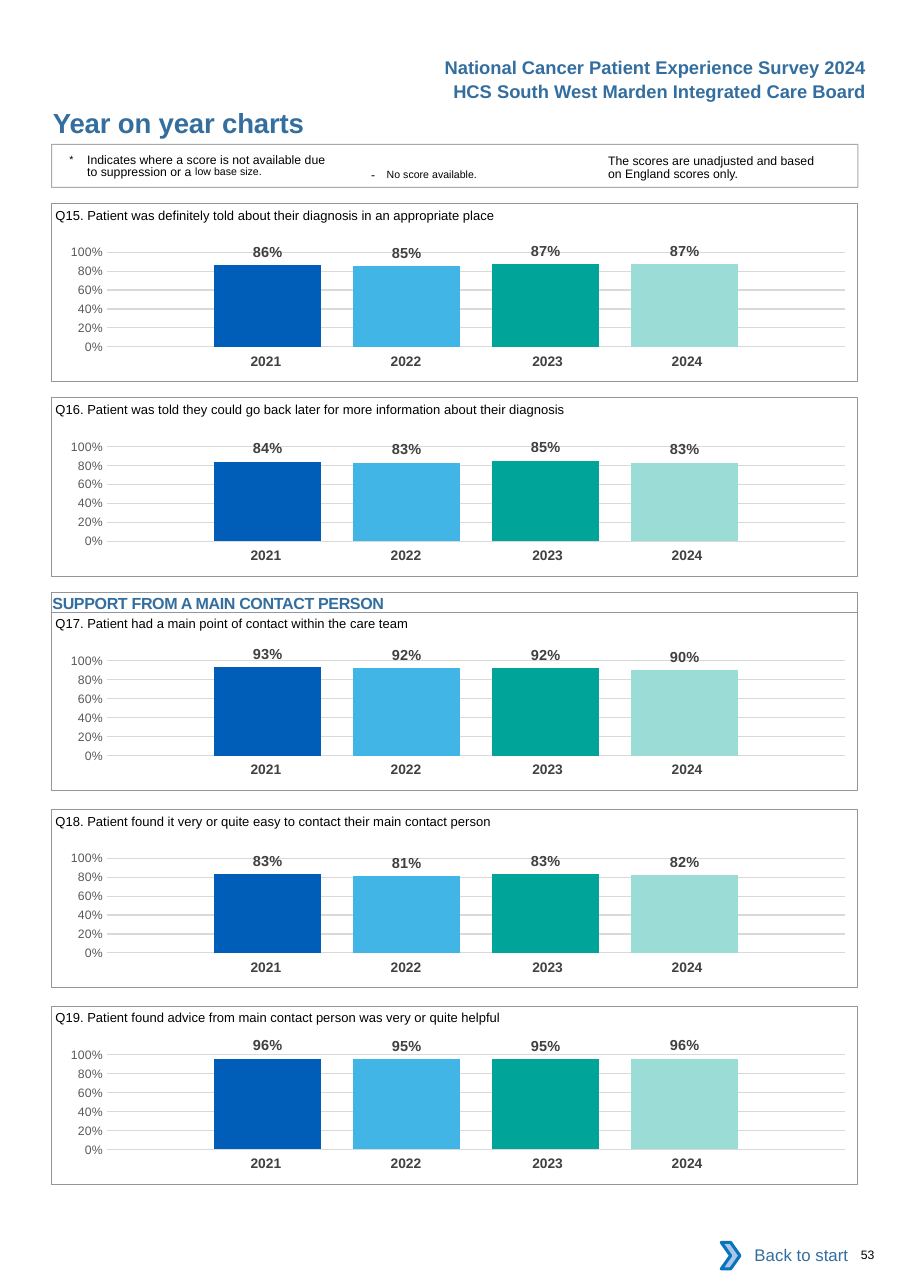
from lxml.etree import SubElement
from pptx import Presentation
from pptx.chart.data import CategoryChartData
from pptx.dml.color import RGBColor
from pptx.enum.chart import XL_CHART_TYPE, XL_LABEL_POSITION, XL_TICK_MARK
from pptx.enum.shapes import MSO_SHAPE
from pptx.enum.text import MSO_ANCHOR, PP_ALIGN
from pptx.oxml import parse_xml
from pptx.oxml.ns import nsdecls, qn
from pptx.util import Cm, Pt

HEADING_BLUE = "336E9F"
FRAME_GREY = "939598"
PANEL_LEFT, PANEL_WIDTH, PANEL_HEIGHT = 1.19, 18.59, 4.11
YEARS = {"2021": "005EB8", "2022": "41B6E6", "2023": "00A499", "2024": "9CDCD7"}
YEAR_WIDTHS = (3.23, 3.23, 3.4, 3.23)
YEAR_RIGHT_MARGINS = (0, 0, 0.1, 0.3)
NO_TABLE_STYLE = "{2D5ABB26-0587-4C30-8999-92F81FD0307C}"

QUESTIONS = [
    (4.69, "Q15. Patient was definitely told about their diagnosis in an appropriate place",
     (0.86, 0.85, 0.87, 0.87)),
    (9.17, "Q16. Patient was told they could go back later for more information about their diagnosis",
     (0.84, 0.83, 0.85, 0.83)),
    (14.11, "Q17. Patient had a main point of contact within the care team",
     (0.93, 0.92, 0.92, 0.90)),
    (18.66, "Q18. Patient found it very or quite easy to contact their main contact person",
     (0.83, 0.81, 0.83, 0.82)),
    (23.19, "Q19. Patient found advice from main contact person was very or quite helpful",
     (0.96, 0.95, 0.95, 0.96)),
]


def rgb(code):
    """Turn a hex string into a colour."""
    return RGBColor.from_string(code)


def style_font(font, size, color="000000", bold=False):
    """Set the Arial style of a font."""
    font.name = "Arial"
    font.size = Pt(size)
    font.bold = bold
    font.color.rgb = rgb(color)


def set_margins(holder, left=0, top=0, right=0, bottom=0):
    """Set the inner margins of a text frame or table cell."""
    holder.margin_left, holder.margin_top = Cm(left), Cm(top)
    holder.margin_right, holder.margin_bottom = Cm(right), Cm(bottom)


def space_run(run, spacing=0, baseline=0):
    """Set letter spacing in points and baseline shift in percent."""
    properties = run._r.get_or_add_rPr()
    properties.set("spc", str(round(spacing * 100)))
    properties.set("baseline", str(baseline * 1000))


def add_text(slide, box, text, size, color="000000", bold=False, spacing=0,
             align=PP_ALIGN.LEFT, margins=(0, 0, 0, 0), wrap=True):
    """Add a text box with one line of uniform text."""
    frame = slide.shapes.add_textbox(*map(Cm, box)).text_frame
    frame.word_wrap = wrap
    set_margins(frame, *margins)
    fill_text(frame, text, size, color, bold, spacing, align)


def fill_text(frame, text, size, color, bold=False, spacing=0, align=PP_ALIGN.LEFT):
    """Write uniform text into a text frame."""
    frame.text = text
    paragraph = frame.paragraphs[0]
    paragraph.alignment = align
    style_font(paragraph.runs[0].font, size, color, bold)
    space_run(paragraph.runs[0], spacing)


def add_note(slide, box, pieces, margins, line_spacing=None):
    """Add a note made of (text, size, spacing, baseline) pieces."""
    frame = slide.shapes.add_textbox(*map(Cm, box)).text_frame
    frame.word_wrap = True
    set_margins(frame, *margins)
    paragraph = frame.paragraphs[0]
    if line_spacing:
        paragraph.line_spacing = Pt(line_spacing)
    for text, size, spacing, baseline in pieces:
        run = paragraph.add_run()
        run.text = text
        style_font(run.font, size)
        space_run(run, spacing, baseline)
    return paragraph


def add_box(slide, kind, box, fill=None, line=None, line_width=0.5):
    """Add a preset shape with optional fill and outline."""
    shape = slide.shapes.add_shape(kind, *map(Cm, box))
    shape.shadow.inherit = False
    if fill:
        shape.fill.solid()
        shape.fill.fore_color.rgb = rgb(fill)
    else:
        shape.fill.background()
    if line:
        shape.line.color.rgb = rgb(line)
        shape.line.width = Pt(line_width)
    else:
        shape.line.fill.background()
    return shape


def place_plot(chart):
    """Fix the inner plot area inside the chart."""
    plot_area = next(chart.element.iter(qn("c:plotArea")))
    for layout in plot_area.findall(qn("c:layout")):
        plot_area.remove(layout)
    settings = {"layoutTarget": "inner", "xMode": "edge", "yMode": "edge",
                "x": 0.08, "y": 0.145, "w": 0.915, "h": 0.666}
    tags = "".join(f'<c:{tag} val="{value}"/>' for tag, value in settings.items())
    plot_area.insert(0, parse_xml(
        f'<c:layout {nsdecls("c")}><c:manualLayout>{tags}</c:manualLayout></c:layout>'))


def add_score_chart(slide, top, scores):
    """Add the column chart with one series per year."""
    data = CategoryChartData(number_format="0%")
    data.categories = ["1"]
    for number, score in enumerate(scores, 1):
        data.add_series(f"Series {number}", [score])
    chart = slide.shapes.add_chart(XL_CHART_TYPE.COLUMN_CLUSTERED, Cm(0.99), Cm(top),
                                   Cm(PANEL_WIDTH), Cm(3.28), data).chart
    chart.has_legend = chart.has_title = False
    chart.font.name, chart.font.size = "Calibri", Pt(10)
    chart.font.color.rgb = rgb("000000")
    chart.category_axis.visible = False
    axis = chart.value_axis
    axis.minimum_scale, axis.maximum_scale, axis.major_unit = 0, 1, 0.2
    axis.major_tick_mark = axis.minor_tick_mark = XL_TICK_MARK.NONE
    axis.format.line.fill.background()
    axis.major_gridlines.format.line.color.rgb = rgb("D9D9D9")
    axis.major_gridlines.format.line.width = Pt(0.75)
    axis.tick_labels.number_format = "0%"
    axis.tick_labels.number_format_is_linked = False
    style_font(axis.tick_labels.font, 8, "595959")
    plot = chart.plots[0]
    plot.gap_width, plot.overlap, plot.vary_by_categories = 200, -30, False
    for series, color in zip(plot.series, YEARS.values()):
        series.format.fill.solid()
        series.format.fill.fore_color.rgb = rgb(color)
        labels = series.data_labels
        labels.show_value = True
        labels.position = XL_LABEL_POSITION.OUTSIDE_END
        labels.number_format, labels.number_format_is_linked = "0%", False
        style_font(labels.font, 9.5, "404040", True)
    place_plot(chart)


def add_year_row(slide, top):
    """Add the one-row table of years below the columns."""
    frame = slide.shapes.add_table(1, len(YEARS), Cm(4.39), Cm(top),
                                   Cm(sum(YEAR_WIDTHS)), Cm(0.69))
    next(frame.element.iter(qn("a:tableStyleId"))).text = NO_TABLE_STYLE
    table = frame.table
    table.first_row = table.horz_banding = False
    for column, year in enumerate(YEARS):
        table.columns[column].width = Cm(YEAR_WIDTHS[column])
        cell = table.cell(0, column)
        cell.fill.background()
        set_margins(cell, 0.25, 0.13, YEAR_RIGHT_MARGINS[column], 0.13)
        fill_text(cell.text_frame, year, 9, "414042", True, align=PP_ALIGN.CENTER)


def add_question(slide, top, question, scores):
    """Add a framed question with its chart and years."""
    add_score_chart(slide, top + 0.65, scores)
    add_year_row(slide, top + 3.33)
    add_box(slide, MSO_SHAPE.RECTANGLE, (PANEL_LEFT, top, PANEL_WIDTH, PANEL_HEIGHT),
            line=FRAME_GREY)
    add_text(slide, (1.28, top - 0.14, 13.8, 0.61), question, 8.5, margins=(0, 0.23, 0, 0))


def add_legend(slide):
    """Add the framed notes on how to read the scores."""
    add_note(slide, (14.02, 3.51, 5.11, 0.69),
             [("The scores are unadjusted and based on England scores only.", 8, 0, 0)],
             (0, 0.08, 0.1, 0), 8.1)
    add_note(slide, (8.31, 3.58, 4.65, 0.61),
             [("- ", 8, 2.6, 0), ("No score available.", 12, 0, 3)],
             (0.25, 0.13, 0.25, 0.13))
    suppression = add_note(
        slide, (1.6, 3.51, 6.91, 0.69),
        [("*\t", 12, 0, 3),
         ("Indicates where a score is not available due to suppression or a ", 8, 0, 0),
         ("low base size.", 12, 0, 7)],
        (0, 0.08, 0.84, 0), 8.1)
    properties = suppression._p.get_or_add_pPr()
    properties.set("marL", str(Cm(0.41)))
    properties.set("indent", str(-Cm(0.41)))
    frame = add_box(slide, MSO_SHAPE.RECTANGLE, (PANEL_LEFT, 3.33, PANEL_WIDTH, 0.99),
                    line=FRAME_GREY, line_width=0.75)
    line_color = next(frame.line._ln.iter(qn("a:srgbClr")))
    SubElement(line_color, qn("a:alpha")).set("val", "80000")


def add_section(slide, top, heading):
    """Add a framed section heading."""
    strip = add_box(slide, MSO_SHAPE.RECTANGLE, (PANEL_LEFT, top, PANEL_WIDTH, 0.45),
                    line=FRAME_GREY)
    strip.text_frame.vertical_anchor = MSO_ANCHOR.TOP
    set_margins(strip.text_frame, 0.02, 0.03)
    fill_text(strip.text_frame, heading, 10.5, HEADING_BLUE, True, -0.2)


def add_back_button(slide):
    """Add the button that leads back to the start."""
    button = add_box(slide, MSO_SHAPE.RECTANGLE, (16.81, 28.4, 3, 1.07), fill="FFFFFF")
    button.text_frame.vertical_anchor = MSO_ANCHOR.MIDDLE
    fill_text(button.text_frame, "Back to start", 11, HEADING_BLUE, align=PP_ALIGN.RIGHT)
    add_box(slide, MSO_SHAPE.CHEVRON, (16.63, 28.64, 0.43, 0.61), "A8C7E9", "0A74BB", 2)


def main():
    """Build the page of year on year charts."""
    deck = Presentation()
    deck.slide_width, deck.slide_height = Cm(20.98), Cm(29.69)
    slide = deck.slides.add_slide(deck.slide_layouts[6])
    add_text(slide, (19.6, 28.76, 1.3, 0.33), "53", 8, margins=(0.25, 0, 0, 0))
    add_text(slide, (1.19, 2.44, 11.43, 0.76), "Year on year charts", 18, HEADING_BLUE,
             True, -0.1, margins=(0.03, 0, 0, 0))
    for top, question, scores in QUESTIONS:
        add_question(slide, top, question, scores)
    add_section(slide, 13.66, "SUPPORT FROM A MAIN CONTACT PERSON")
    add_legend(slide)
    for top, heading in ((1.16, "National Cancer Patient Experience Survey 2024"),
                         (1.73, "HCS South West Marden Integrated Care Board")):
        add_text(slide, (9.96, top, 10.26, 0.76), heading, 12, HEADING_BLUE, True,
                 align=PP_ALIGN.RIGHT, margins=(0.25, 0.13, 0.25, 0.13), wrap=False)
    add_back_button(slide)
    deck.save("out.pptx")


if __name__ == "__main__":
    main()
